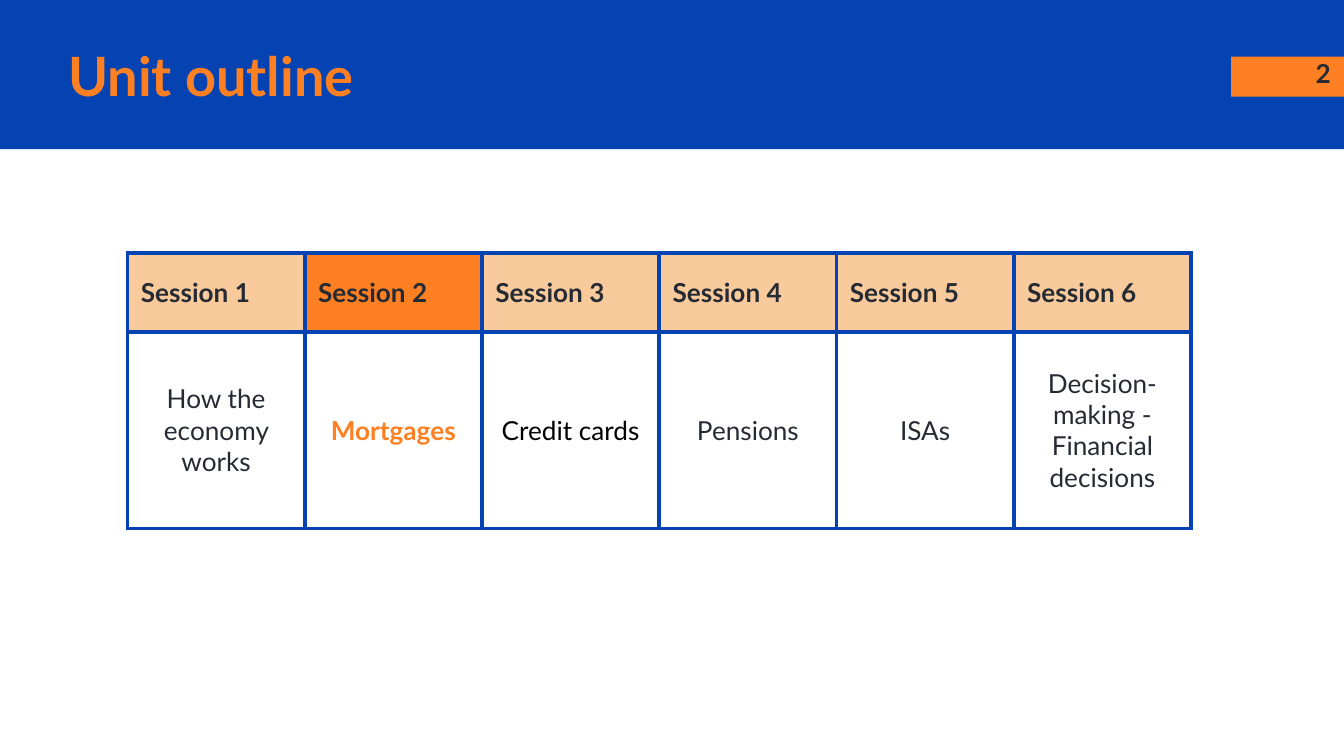
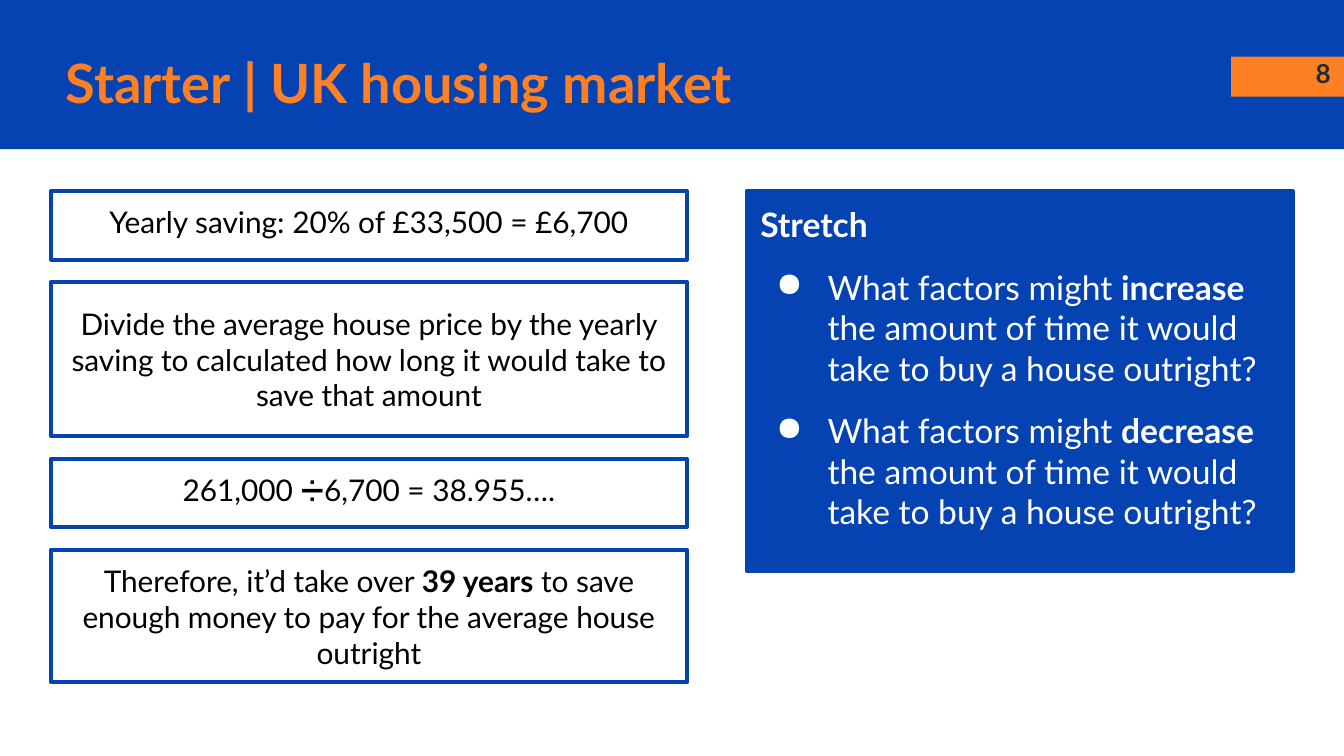
from lxml import etree
from pptx import Presentation
from pptx import util as u
from pptx.dml.color import RGBColor
from pptx.enum import shapes, text
from pptx.oxml import ns

Cm, Pt = u.Cm, u.Pt
BLUE = RGBColor(0x05, 0x43, 0xB3)
ORANGE = RGBColor(0xFF, 0x80, 0x22)
PEACH = RGBColor(0xF9, 0xCB, 0x9C)
DARK = RGBColor(0x26, 0x2A, 0x33)
BLACK = RGBColor(0, 0, 0)
WHITE = RGBColor(0xFF, 0xFF, 0xFF)

FONT = "Lato"
LINE = Pt(2.25)
INSET = Cm(0.25)
LEFT, CENTER, RIGHT = text.PP_ALIGN.LEFT, text.PP_ALIGN.CENTER, text.PP_ALIGN.RIGHT
TOP, MIDDLE = text.MSO_ANCHOR.TOP, text.MSO_ANCHOR.MIDDLE

SIDES = ("left", "right", "top", "bottom")
FRAME = {"word_wrap": True, "auto_size": text.MSO_AUTO_SIZE.NONE}
FRAME.update({f"margin_{side}": INSET for side in SIDES})


def set_all(obj, values):
    for name, value in values.items():
        setattr(obj, name, value)


def write(tf, lines, size, color, align=LEFT, bold=False):
    """Fill a text frame, one paragraph a line; **marks** switch the weight."""
    for i, line in enumerate(lines):
        p = tf.add_paragraph() if i else tf.paragraphs[0]
        p.alignment = align
        for j, part in enumerate(line.split("**")):
            if part:
                r = p.add_run()
                r.text = part
                set_all(r.font, {"name": FONT, "size": Pt(size), "bold": bold != bool(j % 2)})
                r.font.color.rgb = color


def add_box(s, box, fill=None, line=None, anchor=TOP):
    sp = s.shapes.add_shape(shapes.MSO_SHAPE.RECTANGLE, *map(Cm, box))
    sp.shadow.inherit = False
    if fill is None:
        sp.fill.background()
    else:
        sp.fill.solid()
        sp.fill.fore_color.rgb = fill
    if line is None:
        sp.line.fill.background()
    else:
        sp.line.color.rgb = line
        sp.line.width = LINE
    set_all(sp.text_frame, {**FRAME, "vertical_anchor": anchor})
    return sp


def dress_layout(s):
    """Give the layout of slide s the header band and the page tag."""
    layout = s.slide_layout
    tree = layout.shapes.element
    for ph in list(layout.placeholders):
        if ph.placeholder_format.idx >= 10:
            tree.remove(ph.element)
    band = add_box(s, (0, 0, 25.4, 2.82), BLUE)
    tag = add_box(s, (23.27, 1.07, 2.13, 0.76), ORANGE)
    for i, sp in enumerate((band, tag), start=2):
        tree.insert(i, sp.element)


def add_header(s, title, box, number):
    names = ("left", "top", "width", "height")
    set_all(s.shapes.title, dict(zip(names, map(Cm, box))))
    tf = s.shapes.title.text_frame
    set_all(tf, {**FRAME, "vertical_anchor": MIDDLE})
    write(tf, [title], 29, ORANGE, bold=True)

    tf = s.shapes.add_textbox(Cm(23.88), Cm(0.84), Cm(1.52), Cm(1.09)).text_frame
    set_all(tf, FRAME)
    write(tf, [number], 14, DARK, RIGHT, True)


def format_cell(cell, margin, fill=None):
    """Set borders, margins and fill, with the borders first in the XML."""
    tc_pr = cell._tc.get_or_add_tcPr()
    for tag in ("a:lnL", "a:lnR", "a:lnT", "a:lnB"):
        ln = etree.SubElement(tc_pr, ns.qn(tag), w=str(LINE))
        solid = etree.SubElement(ln, ns.qn("a:solidFill"))
        etree.SubElement(solid, ns.qn("a:srgbClr"), val=str(BLUE))
    set_all(cell, {f"margin_{side}": margin for side in SIDES})
    cell.vertical_anchor = MIDDLE
    if fill is None:
        cell.fill.background()
    else:
        cell.fill.solid()
        cell.fill.fore_color.rgb = fill


def add_sessions(s, x, y, col_width, row_heights, topics, current):
    """Draw the table of sessions with the current one highlighted."""
    table = s.shapes.add_table(2, len(topics), Cm(x), Cm(y),
                               Cm(col_width * len(topics)), Cm(sum(row_heights))).table
    set_all(table, {"first_row": False, "horz_banding": False})
    for row, height in zip(table.rows, row_heights):
        row.height = Cm(height)
    for i, (lines, color) in enumerate(topics):
        table.columns[i].width = Cm(col_width)
        now = i == current
        head, body = table.cell(0, i), table.cell(1, i)
        format_cell(head, INSET, ORANGE if now else PEACH)
        write(head.text_frame, [f"Session {i + 1}"], 14, DARK, bold=True)
        format_cell(body, Cm(0.18))
        write(body.text_frame, lines, 14, color, CENTER, now)


def add_steps(s, x, y, width, gap, steps):
    """Stack outlined boxes, one for each (height, anchor, text)."""
    for height, anchor, line in steps:
        sp = add_box(s, (x, y, width, height), line=BLUE, anchor=anchor)
        write(sp.text_frame, [line], 16, BLACK, CENTER)
        y += height + gap


def add_stretch(s, box, heading, questions):
    tf = add_box(s, box, BLUE, BLUE).text_frame
    write(tf, [f"**{heading}**", *questions], 18, WHITE)
    for p in tf.paragraphs[1:]:
        p_pr = p._p.get_or_add_pPr()
        p_pr.set("marL", str(Cm(1.27)))
        p_pr.set("indent", str(Cm(-0.97)))
        bu_color = etree.SubElement(p_pr, ns.qn("a:buClr"))
        etree.SubElement(bu_color, ns.qn("a:srgbClr"), val=str(WHITE))
        etree.SubElement(p_pr, ns.qn("a:buChar"), char="●")
        p.space_before = Pt(12)


def outline_slide(s):
    add_header(s, "Unit outline", (1.04, 0.71, 21.49, 1.42), "2")
    topics = [
        (["How the economy works"], DARK),
        (["Mortgages"], ORANGE),
        (["Credit cards"], BLACK),
        (["Pensions"], DARK),
        (["ISAs"], DARK),
        (["Decision-", "making -", "Financial decisions"], DARK),
    ]
    add_sessions(s, 2.41, 4.78, 3.35, (1.49, 3.72), topics, current=1)


def starter_slide(s):
    add_header(s, "Starter | UK housing market", (0.99, 0.84, 22.2, 1.42), "8")
    add_stretch(s, (14.12, 3.61, 10.31, 7.19), "Stretch", [
        "What factors might **increase** the amount of time it would take to buy a house outright?",
        "What factors might **decrease **the amount of time it would take to buy a house outright?",
    ])
    add_steps(s, 0.97, 3.61, 12.01, 0.42, [
        (1.3, TOP, "Yearly saving: 20% of £33,500 = £6,700"),
        (2.92, MIDDLE, "Divide the average house price by the yearly saving to calculated "
                       "how long it would take to save that amount"),
        (1.3, TOP, "261,000 ➗6,700 = 38.955…."),
        (2.51, TOP, "Therefore, it’d take over **39 years** to save enough money to pay "
                    "for the average house outright"),
    ])


def main():
    prs = Presentation()
    set_all(prs, {"slide_width": Cm(25.4), "slide_height": Cm(14.29)})
    layout = prs.slide_layouts[5]
    for i, build in enumerate((outline_slide, starter_slide)):
        s = prs.slides.add_slide(layout)
        if i == 0:
            dress_layout(s)
        build(s)
    prs.save("out.pptx")


if __name__ == "__main__":
    main()
